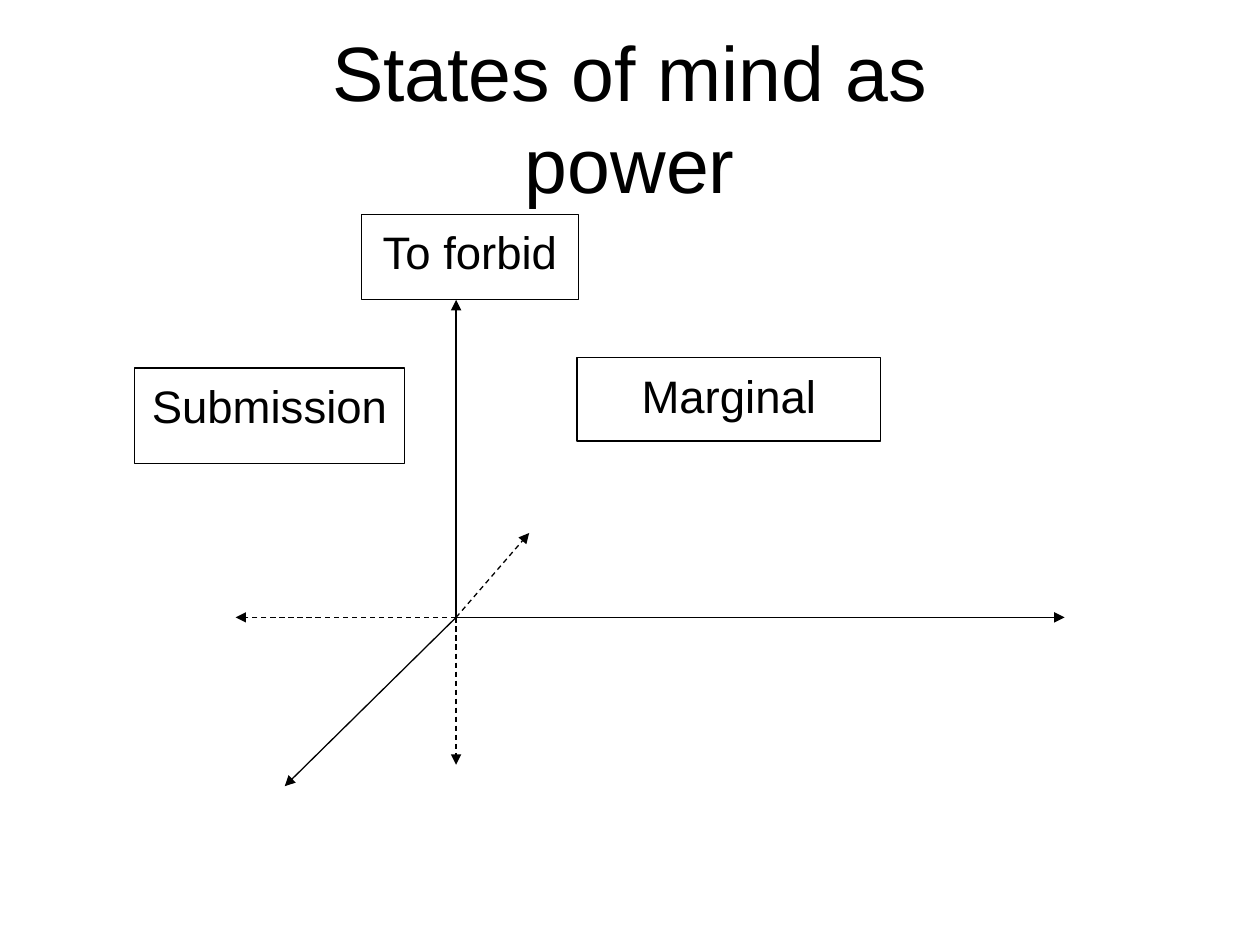
from lxml.etree import SubElement
from pptx import Presentation
from pptx.dml.color import RGBColor
from pptx.enum.dml import MSO_LINE_DASH_STYLE as Dash
from pptx.enum.shapes import MSO_CONNECTOR as Conn, MSO_SHAPE as Shape
from pptx.enum.text import MSO_ANCHOR as Anchor, PP_ALIGN as Align
from pptx.oxml.ns import qn
from pptx.util import Inches, Pt

# Content
TITLE = ["States of mind as", "power"]
ORIGIN = (3.62, 4.9)
# Axis tip, dashed
AXES = [
    ((3.62, 2.38), False),
    ((2.26, 6.24), False),
    ((8.45, 4.9), False),
    ((3.62, 6.07), True),
    ((1.87, 4.9), True),
    ((4.2, 4.23), True),
]
# Label, left, top, width, height, fill
BOXES = [
    ("Submission", 1.07, 2.92, 2.14, 0.76, None),
    ("Marginal", 4.58, 2.84, 2.41, 0.66, "FFFFFF"),
    ("To forbid", 2.87, 1.7, 1.72, 0.68, None),
]
INK = "000000"


def color(value):
    return RGBColor.from_string(value)


def style_line(line):
    line.color.rgb = color(INK)
    line.width = Pt(0.75)


def write(tf, lines, size, anchor):
    tf.word_wrap = True
    tf.vertical_anchor = anchor
    p = tf.paragraphs[0]
    p.alignment = Align.CENTER
    for i, text in enumerate(lines):
        if i:
            p.add_line_break()
        r = p.add_run()
        r.text = text
        r.font.name = "Arial"
        r.font.size = Pt(size)
        r.font.color.rgb = color(INK)


prs = Presentation()
prs.slide_width, prs.slide_height = Inches(10), Inches(7.5)
s = prs.slides.add_slide(prs.slide_layouts[6])

# Title
sp = s.shapes.add_textbox(*map(Inches, (0.5, 0.3, 9, 1.25)))
write(sp.text_frame, TITLE, 44, Anchor.MIDDLE)

# Axes from the common origin
for tip, dashed in AXES:
    axis = s.shapes.add_connector(Conn.STRAIGHT, *map(Inches, ORIGIN + tip))
    style_line(axis.line)
    if dashed:
        axis.line.dash_style = Dash.DASH
    SubElement(axis.line._get_or_add_ln(), qn("a:tailEnd"), type="triangle")
    SubElement(axis._element.spPr, qn("a:effectLst"))

# Labelled boxes
for label, left, top, width, height, fill in BOXES:
    sp = s.shapes.add_shape(Shape.RECTANGLE, *map(Inches, (left, top, width, height)))
    sp.shadow.inherit = False
    style_line(sp.line)
    if fill:
        sp.fill.solid()
        sp.fill.fore_color.rgb = color(fill)
    else:
        sp.fill.background()
    sp.text_frame.margin_top = Inches(0.08)
    write(sp.text_frame, [label], 26, Anchor.TOP)

prs.save("out.pptx")
